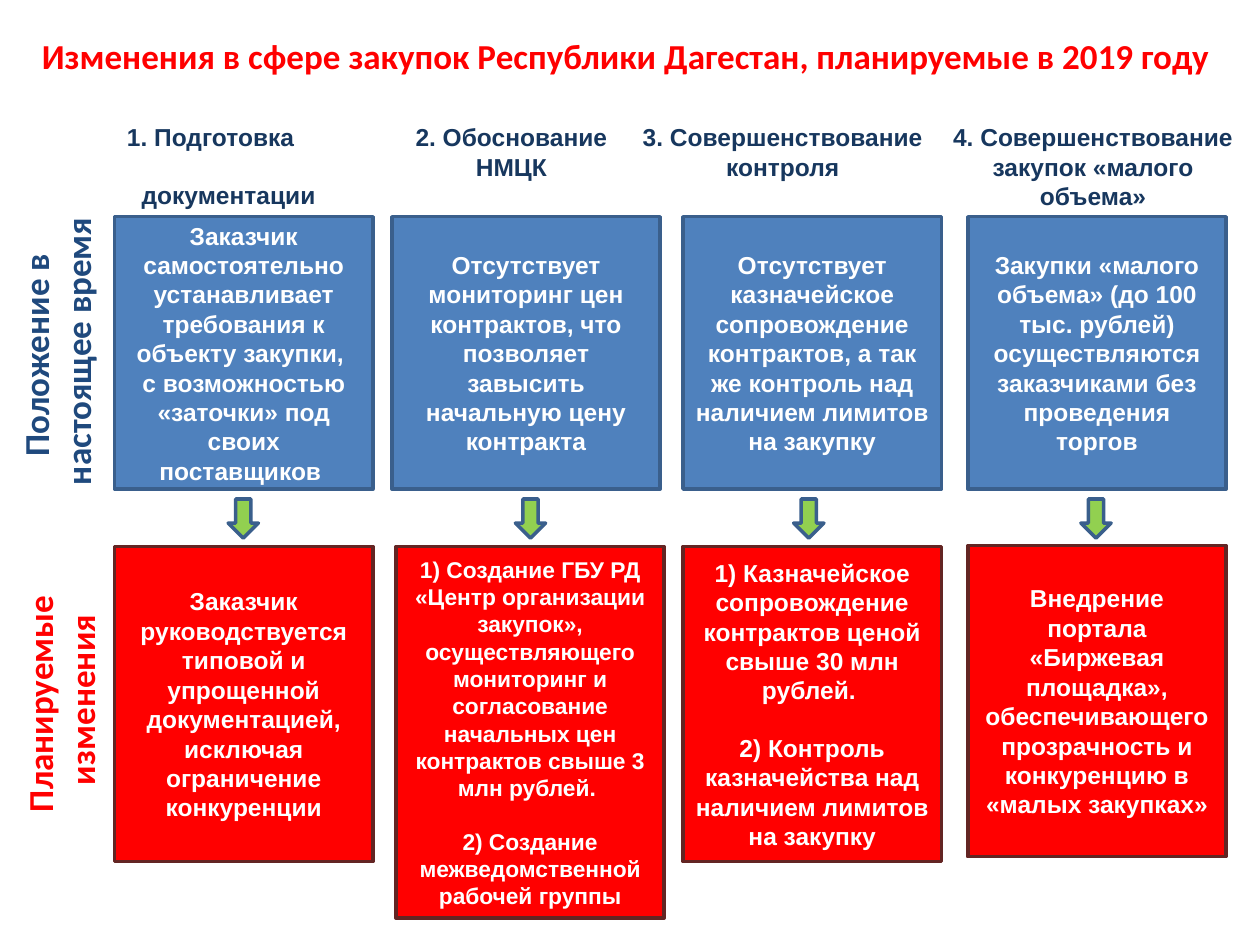
import pptx
import pptx.dml.color
import pptx.enum.shapes
import pptx.enum.text
import pptx.util
from pptx.util import Cm

ALIGN = pptx.enum.text.PP_ALIGN
ANCHOR = pptx.enum.text.MSO_ANCHOR
SHAPE = pptx.enum.shapes.MSO_SHAPE
TITLE_ONLY = 5


def color(hex_string):
    return pptx.dml.color.RGBColor.from_string(hex_string)


class SlideBuilder:
    RED = "FF0000"
    BLUE = "4F81BD"
    BLUE_LINE = "3A5F8C"
    RED_LINE = "632523"
    GREEN = "92D050"
    HEADING = "17375E"
    SIDE = "1F497D"
    WHITE = "FFFFFF"

    def __init__(self, presentation):
        self.slide = presentation.slides.add_slide(
            presentation.slide_layouts[TITLE_ONLY])

    def fill_text(self, frame, paragraphs, size, font, hex_color, gap=0):
        """Fill the frame; gap is the space in points between paragraphs."""
        for index, text in enumerate(paragraphs):
            paragraph = frame.paragraphs[0] if index == 0 else frame.add_paragraph()
            paragraph.alignment = ALIGN.CENTER
            if index:
                paragraph.space_before = pptx.util.Pt(gap)
            for line_number, line in enumerate(text.split("\n")):
                if line_number:
                    paragraph.add_line_break()
                run = paragraph.add_run()
                run.text = line
                run.font.name = font
                run.font.size = pptx.util.Pt(size)
                run.font.bold = True
                run.font.color.rgb = color(hex_color)

    def title(self, text, left, top, width, height):
        title = self.slide.shapes.title
        title.left, title.top = Cm(left), Cm(top)
        title.width, title.height = Cm(width), Cm(height)
        frame = title.text_frame
        frame.auto_size = pptx.enum.text.MSO_AUTO_SIZE.NONE
        frame.vertical_anchor = ANCHOR.TOP
        self.fill_text(frame, [text], 20, "Calibri", self.RED)

    def heading(self, paragraphs, left, top, width, height):
        box = self.slide.shapes.add_textbox(
            Cm(left), Cm(top), Cm(width), Cm(height))
        frame = box.text_frame
        frame.word_wrap = True
        self.fill_text(frame, paragraphs, 14, "Arial", self.HEADING, gap=16)
        if len(paragraphs) > 1:
            frame.paragraphs[0].alignment = ALIGN.LEFT

    def side_label(self, lines, hex_color, left, top, width, height):
        box = self.slide.shapes.add_textbox(
            Cm(left), Cm(top), Cm(width), Cm(height))
        box.rotation = 270
        box.text_frame.word_wrap = False
        self.fill_text(box.text_frame, lines, 20, "Calibri", hex_color)

    def outlined(self, kind, fill, line, left, top, width, height):
        shape = self.slide.shapes.add_shape(
            kind, Cm(left), Cm(top), Cm(width), Cm(height))
        shape.shadow.inherit = False
        shape.fill.solid()
        shape.fill.fore_color.rgb = color(fill)
        shape.line.color.rgb = color(line)
        shape.line.width = pptx.util.Pt(2)
        return shape

    def card(self, paragraphs, fill, line, left, top, width, height, size=14):
        frame = self.outlined(
            SHAPE.RECTANGLE, fill, line, left, top, width, height).text_frame
        frame.word_wrap = True
        frame.vertical_anchor = ANCHOR.MIDDLE
        self.fill_text(frame, paragraphs, size, "Arial", self.WHITE,
                       gap=size * 1.15)

    def arrow(self, left):
        self.outlined(SHAPE.DOWN_ARROW, self.GREEN, self.BLUE_LINE,
                      left, 10.06, 0.61, 0.79)


COLUMNS = [
    {
        "heading": ["1. Подготовка", "документации"],
        "heading_box": (2.31, 2.34, 4.6, 1.45),
        "left": 2.31, "width": 5.21, "arrow": 4.6,
        "now": "Заказчик самостоятельно устанавливает требования к объекту "
               "закупки, \nс возможностью «заточки» под своих поставщиков ",
        "planned": ["Заказчик руководствуется типовой и упрощенной "
                    "документацией, исключая ограничение конкуренции"],
        "planned_box": (2.31, 11.02, 5.21, 6.35),
    },
    {
        "heading": ["2. Обоснование НМЦК"],
        "heading_box": (8.05, 2.34, 4.52, 1.45),
        "left": 7.9, "width": 5.41, "arrow": 10.39,
        "now": "Отсутствует мониторинг цен контрактов, что позволяет "
               "завысить начальную цену контракта",
        "planned": ["1) Создание ГБУ РД «Центр организации закупок», "
                    "осуществляющего мониторинг и согласование начальных цен "
                    "контрактов свыше 3 млн рублей. ",
                    "2) Создание межведомственной рабочей группы"],
        "planned_box": (7.98, 11.02, 5.41, 7.49),
        "planned_size": 13,
    },
    {
        "heading": ["3. Совершенствование контроля"],
        "heading_box": (12.62, 2.34, 6.32, 1.45),
        "left": 13.77, "width": 5.21, "arrow": 16,
        "now": "Отсутствует казначейское сопровождение контрактов, а так же "
               "контроль над наличием лимитов на закупку",
        "planned": ["1) Казначейское сопровождение контрактов ценой свыше "
                    "30 млн рублей. ",
                    "2) Контроль казначейства над наличием лимитов на закупку"],
        "planned_box": (13.77, 11.02, 5.21, 6.35),
    },
    {
        "heading": ["4. Совершенствование закупок «малого объема»"],
        "heading_box": (18.95, 2.34, 6.17, 2.06),
        "left": 19.51, "width": 5.21, "arrow": 21.79,
        "now": "Закупки «малого объема» (до 100 тыс. рублей) "
               "осуществляются заказчиками без проведения торгов",
        "planned": ["Внедрение портала «Биржевая площадка», обеспечивающего "
                    "прозрачность и конкуренцию в «малых закупках»"],
        "planned_box": (19.51, 11, 5.21, 6.27),
    },
]


def main():
    presentation = pptx.Presentation()
    presentation.slide_width, presentation.slide_height = Cm(25.4), Cm(19.05)
    builder = SlideBuilder(presentation)
    builder.title("Изменения в сфере закупок Республики Дагестан, "
                  "планируемые в 2019 году", 0.51, 0.56, 24.21, 1.12)
    for column in COLUMNS:
        builder.heading(column["heading"], *column["heading_box"])
        builder.card([column["now"]], builder.BLUE, builder.BLUE_LINE,
                     column["left"], 4.37, column["width"], 5.49)
        builder.arrow(column["arrow"])
        builder.card(column["planned"], builder.RED, builder.RED_LINE,
                     *column["planned_box"], size=column.get("planned_size", 14))
    builder.side_label(["Положение в ", "настоящее время"], builder.SIDE,
                       -1.83, 6.1, 5.94, 1.96)
    builder.side_label(["Планируемые ", "изменения"], builder.RED,
                       -1.32, 13.13, 5.08, 1.96)
    presentation.save("out.pptx")


if __name__ == "__main__":
    main()
